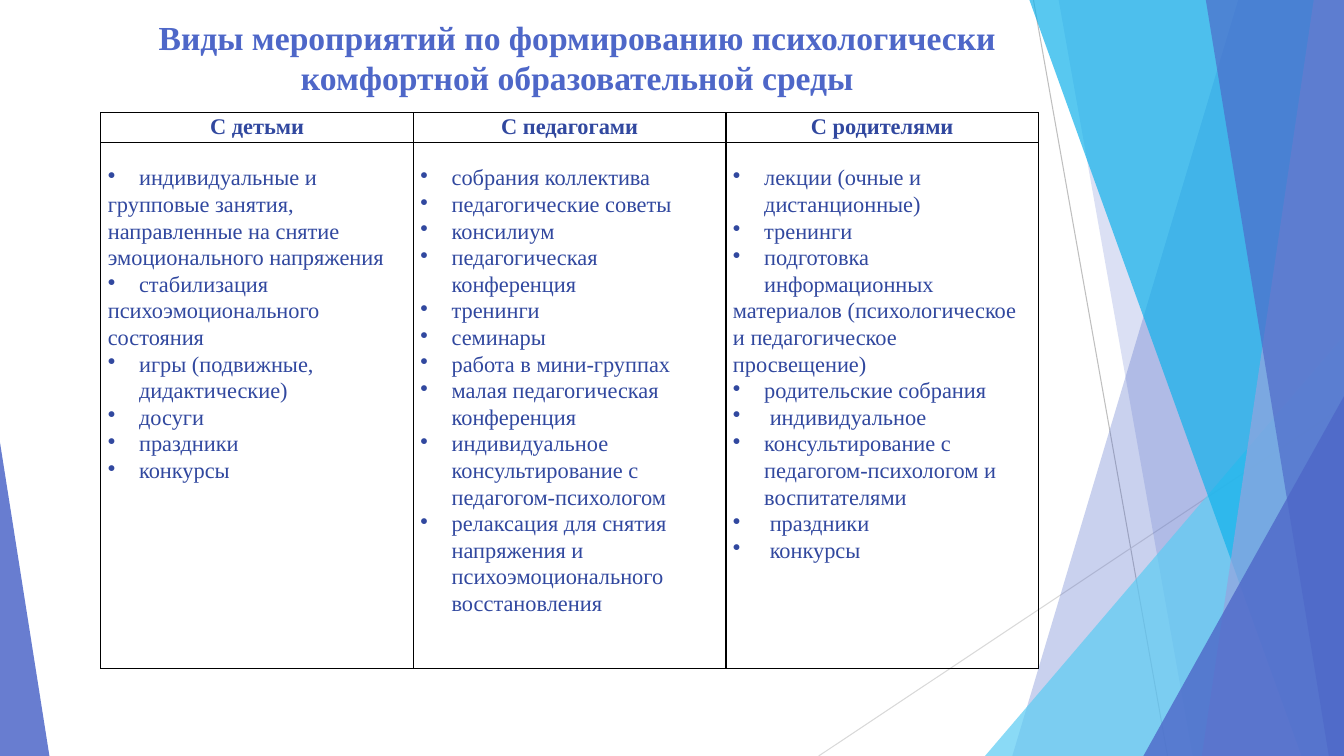
from lxml import etree
from pptx import Presentation
from pptx.dml.color import RGBColor
from pptx.enum.shapes import MSO_CONNECTOR, MSO_SHAPE
from pptx.enum.text import MSO_ANCHOR, PP_ALIGN
from pptx.oxml.ns import qn
from pptx.util import Pt

LINE = MSO_CONNECTOR.STRAIGHT
TRI = MSO_SHAPE.ISOSCELES_TRIANGLE
TOP = MSO_ANCHOR.TOP
LEFT, MID = PP_ALIGN.LEFT, PP_ALIGN.CENTER

PX = 9144  # 100 px to the inch
WIDE, HIGH = 1333, 750
FONT = "Times New Roman"
HUES = {
    "blue": "4E67C8", "navy": "31489F", "cyan": "12B2EB", "sky": "5ECCF3",
    "mist": "95A4DE", "gray": "BFBFBF", "pale": "D9D9D9", "black": "000000",
}

# A paragraph is (bulleted, text)
HEADS = ["С детьми", "С педагогами", "С родителями"]
LISTS = [
    [(True, "индивидуальные и"),
     (False, "групповые занятия, направленные на снятие эмоционального напряжения"),
     (True, "стабилизация"),
     (False, "психоэмоционального состояния"),
     (True, "игры (подвижные, дидактические)"),
     (True, "досуги"),
     (True, "праздники"),
     (True, "конкурсы")],
    [(True, "собрания коллектива"),
     (True, "педагогические советы"),
     (True, "консилиум"),
     (True, "педагогическая конференция"),
     (True, "тренинги"),
     (True, "семинары"),
     (True, "работа в мини-группах"),
     (True, "малая педагогическая конференция"),
     (True, "индивидуальное консультирование с педагогом-психологом"),
     (True, "релаксация для снятия напряжения и психоэмоционального восстановления")],
    [(True, "лекции (очные и дистанционные)"),
     (True, "тренинги"),
     (True, "подготовка информационных"),
     (False, "материалов (психологическое и педагогическое просвещение)"),
     (True, "родительские собрания"),
     (True, " индивидуальное"),
     (True, "консультирование с педагогом-психологом и воспитателями"),
     (True, " праздники"),
     (True, " конкурсы")],
]


def px(*nums):
    return [n * PX for n in nums]


def rgb(hue):
    return RGBColor.from_string(HUES[hue])


def paint(shape, hue, alpha):
    shape.shadow.inherit = False
    shape.line.fill.background()
    shape.fill.solid()
    shape.fill.fore_color.rgb = rgb(hue)
    color = shape.fill._xPr.find(qn("a:solidFill"))[0]
    etree.SubElement(color, qn("a:alpha"), val=str(alpha * 1000))


def write(para, text, size, hue, bold, align):
    para.alignment = align
    run = para.add_run()
    run.text = text
    run.font.name = FONT
    run.font.size = Pt(size)
    run.font.bold = bold
    run.font.color.rgb = rgb(hue)


def ray(slide, ends, hue):
    line = slide.shapes.add_connector(LINE, *px(*ends))
    line.line.color.rgb = rgb(hue)
    line.line.width = Pt(0.75)
    etree.SubElement(line._element.spPr, qn("a:effectLst"))


def band(slide, box, top, foot, hue, alpha):
    """Fill from a slanted left edge to the right side of the box."""
    x, y, w, h = box
    build = slide.shapes.build_freeform(x + top, y, scale=PX)
    build.add_line_segments([(x + w, y), (x + w, y + h), (x + foot, y + h)])
    paint(build.convert_to_shape(), hue, alpha)


def wedge(slide, box, apex, hue, alpha):
    shape = slide.shapes.add_shape(TRI, *px(*box))
    shape.adjustments[0] = apex
    paint(shape, hue, alpha)


def decor(slide, box):
    x, y, w, h = box
    right, foot = x + w, y + h
    ray(slide, (x + 1025, y, x + 1158, foot), "gray")
    ray(slide, (right, y + 403, x + 812, foot), "pale")
    band(slide, box, 1228, 1004, "blue", 30)
    band(slide, box, 1050, 1183, "blue", 20)
    wedge(slide, (right - 356, foot - 417, 356, 417), 1, "sky", 72)
    band(slide, box, 1021, 1291, "cyan", 70)
    band(slide, box, 1303, 1192, "mist", 70)
    band(slide, box, 1196, 1318, "blue", 65)
    wedge(slide, (right - 199, foot - 357, 199, 357), 1, "blue", 80)
    wedge(slide, (x, foot - 311, 49, 311), 0, "blue", 85)


def title(slide, box):
    frame = slide.shapes.add_textbox(*px(*box)).text_frame
    frame.word_wrap = True
    frame.vertical_anchor = TOP
    write(frame.paragraphs[0],
          "Виды мероприятий по формированию психологически "
          "комфортной образовательной среды", 24, "blue", True, MID)


def frame_cell(cell):
    props = cell._tc.get_or_add_tcPr()
    for side in ("lnL", "lnR", "lnT", "lnB"):
        edge = etree.SubElement(props, qn("a:" + side), w=str(Pt(1)))
        fill = etree.SubElement(edge, qn("a:solidFill"))
        etree.SubElement(fill, qn("a:srgbClr"), val=HUES["black"])
    cell.fill.background()


def fill_cell(cell, items, pad, bold, align):
    frame_cell(cell)
    cell.margin_left = cell.margin_right = 7 * PX
    cell.margin_top, cell.margin_bottom = pad * PX, 0
    cell.vertical_anchor = TOP
    frame = cell.text_frame
    for i, (dot, text) in enumerate(items):
        para = frame.add_paragraph() if i else frame.paragraphs[0]
        para.line_spacing = 1.07
        write(para, text, 16, "navy", bold, align)
        if dot:
            props = para._p.get_or_add_pPr()
            props.set("marL", str(31 * PX))
            props.set("indent", str(-31 * PX))
            etree.SubElement(props, qn("a:buChar"), char="•")


def grid(slide, box):
    w, h = box[2:]
    head = 29
    table = slide.shapes.add_table(2, len(HEADS), *px(*box)).table
    table.first_row = table.horz_banding = False
    for col in table.columns:
        col.width = w // len(HEADS) * PX
    for row, tall in zip(table.rows, (head, h - head)):
        row.height = tall * PX
    for i, (name, items) in enumerate(zip(HEADS, LISTS)):
        fill_cell(table.cell(0, i), [(False, name)], 0, True, MID)
        fill_cell(table.cell(1, i), items, 22, False, LEFT)


def main():
    deck = Presentation()
    deck.slide_width, deck.slide_height = px(WIDE, HIGH)
    slide = deck.slides.add_slide(deck.slide_layouts[6])
    decor(slide, (0, 0, WIDE, HIGH))
    title(slide, (114, 12, 917, 99))
    grid(slide, (100, 112, 930, 551))
    deck.save("out.pptx")


if __name__ == "__main__":
    main()
